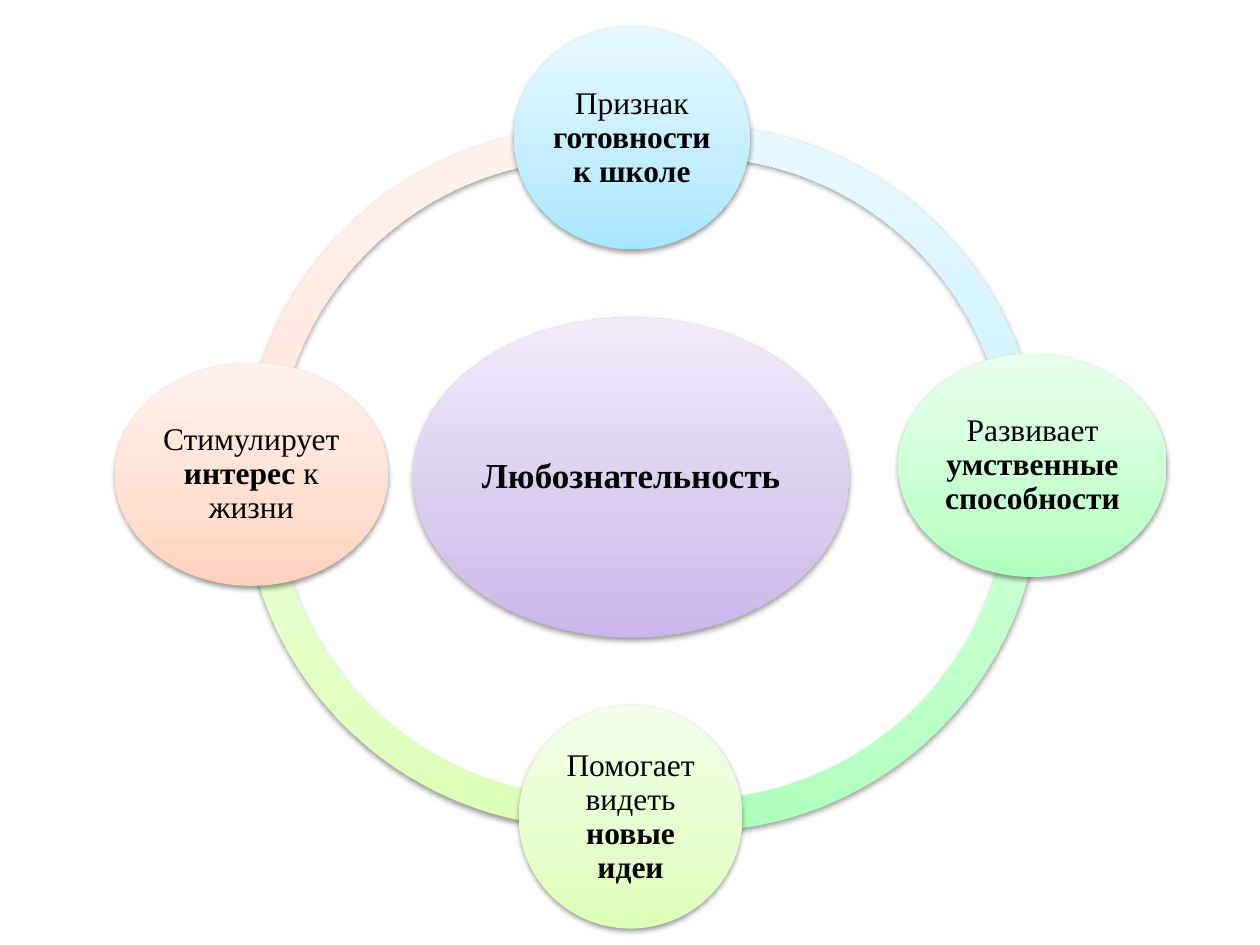
import copy
import pptx
import pptx.dml.color
import pptx.enum.shapes
import pptx.enum.text
import pptx.oxml
import pptx.oxml.ns
import pptx.util

Inches = pptx.util.Inches
KINDS = pptx.enum.shapes.MSO_SHAPE
HUES = {
    "peach": ("FFD2BD", "FFDED0", "FFF2ED"),
    "lime": ("DBFFB6", "E5FFCB", "F5FFEB"),
    "mint": ("AFFFBD", "C6FFD0", "E9FFED"),
    "sky": ("A7E6FF", "C1EDFF", "E7F8FF"),
    "lilac": ("C9B5E8", "D8CBEE", "F0EAF9"),
    "text": "000000",
}
STOPS = (0, 0.35, 1)
SHADE = (
    f'<a:outerShdw {pptx.oxml.ns.nsdecls("a")} blurRad="40000" dist="20000" '
    'dir="5400000" rotWithShape="0"><a:srgbClr val="000000">'
    '<a:alpha val="38000"/></a:srgbClr></a:outerShdw>'
)
FRAME = {
    "word_wrap": True,
    "vertical_anchor": pptx.enum.text.MSO_ANCHOR.MIDDLE,
    **{f"margin_{side}": Inches(0.03) for side in ("left", "top", "right", "bottom")},
}
PARA = {"alignment": pptx.enum.text.PP_ALIGN.CENTER, "line_spacing": 0.9}
ARC_SIZE = 5.52
ARC_WIDTH = 0.046
ARCS = [
    ("peach", 1.93, 1.01, 179.97, 276.93),
    ("lime", 1.93, 1.05, 83.06, 180.81),
    ("mint", 2.74, 1.08, 356.98, 100.5),
    ("sky", 2.74, 0.99, 259.57, 358.89),
]
OVALS = [
    ("lilac", (3.28, 2.52, 3.46, 2.54), 20, [("Любознательность", True)]),
    ("sky", (4.08, 0.21, 1.87, 1.77), 18,
     [("Признак ", False), ("готовности к школе", True)]),
    ("mint", (7.13, 2.81, 2.13, 1.77), 18,
     [("Развивает ", False), ("умственные способности", True)]),
    ("lime", (4.12, 5.6, 1.77, 1.77), 18,
     [("Помогает видеть ", False), ("новые идеи", True)]),
    ("peach", (0.91, 2.88, 2.17, 1.77), 18,
     [("Стимулирует ", False), ("интерес", True), (" к жизни", False)]),
]


def apply(item, values):
    for name, value in values.items():
        setattr(item, name, value)


class Deck:
    font = "Times New Roman"

    def __init__(self):
        self.file = pptx.Presentation()
        apply(self.file, {"slide_width": Inches(10), "slide_height": Inches(7.5)})
        self.slide = self.file.slides.add_slide(self.file.slide_layouts[6])

    def shape(self, kind, box, hue):
        shape = self.slide.shapes.add_shape(kind, *map(Inches, box))
        shape.line.fill.background()
        shape.fill.gradient()
        shape.fill.gradient_angle = 90
        props = shape.element.spPr
        stops = props.find(".//" + pptx.oxml.ns.qn("a:gsLst"))
        stops.append(copy.deepcopy(stops[0]))
        for stop, place, tone in zip(shape.fill.gradient_stops, STOPS, HUES[hue]):
            stop.position = place
            stop.color.rgb = pptx.dml.color.RGBColor.from_string(tone)
        shape.shadow.inherit = False
        props.find(pptx.oxml.ns.qn("a:effectLst")).append(pptx.oxml.parse_xml(SHADE))
        return shape

    def arc(self, hue, left, top, start, end):
        box = (left, top, ARC_SIZE, ARC_SIZE)
        shape = self.shape(KINDS.BLOCK_ARC, box, hue)
        for i, value in enumerate((start * 0.6, end * 0.6, ARC_WIDTH)):
            shape.adjustments[i] = value

    def oval(self, hue, box, size, runs):
        frame = self.shape(KINDS.OVAL, box, hue).text_frame
        apply(frame, FRAME)
        para = frame.paragraphs[0]
        apply(para, PARA)
        for text, bold in runs:
            run = para.add_run()
            run.text = text
            apply(run.font, {"name": self.font, "size": pptx.util.Pt(size), "bold": bold})
            run.font.color.rgb = pptx.dml.color.RGBColor.from_string(HUES["text"])


def main():
    deck = Deck()
    for arc in ARCS:
        deck.arc(*arc)
    for oval in OVALS:
        deck.oval(*oval)
    deck.file.save("out.pptx")


if __name__ == "__main__":
    main()
